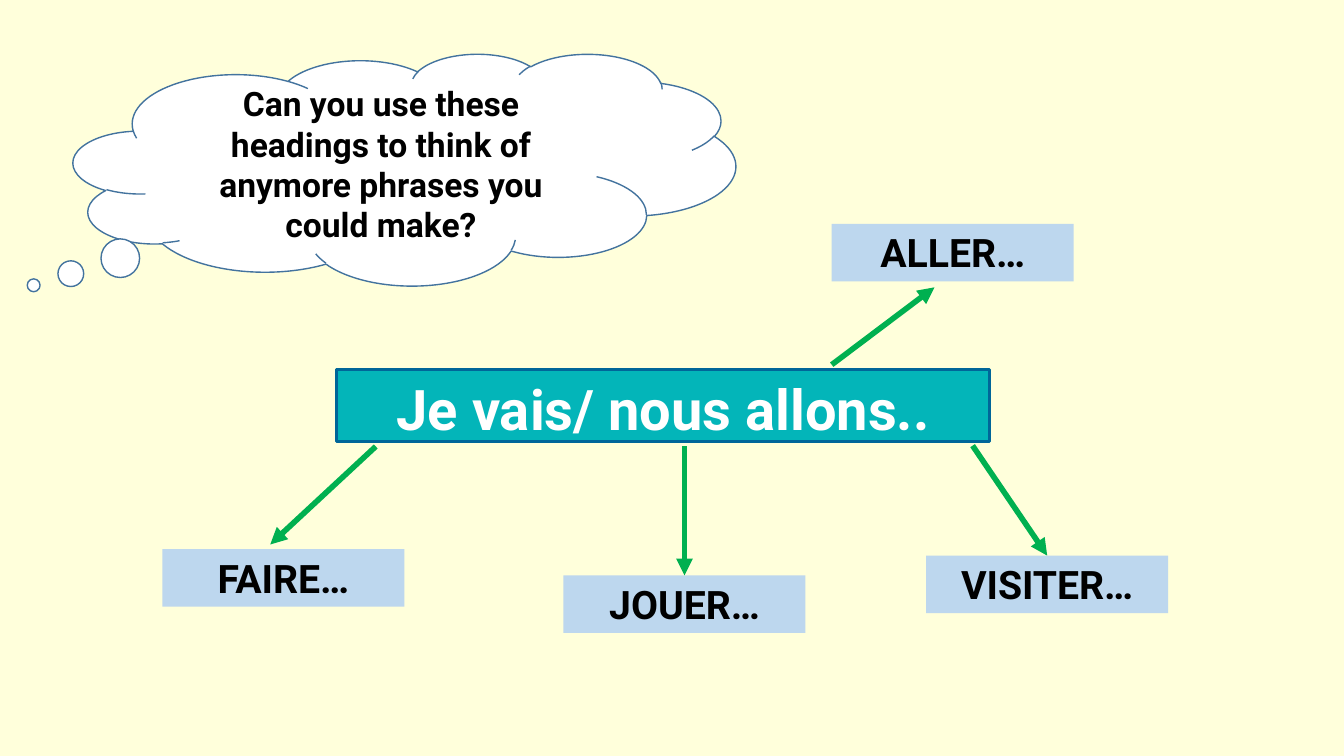
from dataclasses import dataclass

from lxml.etree import SubElement
from pptx import Presentation
from pptx.dml.color import RGBColor
from pptx.enum.shapes import MSO_CONNECTOR, MSO_SHAPE
from pptx.enum.text import MSO_ANCHOR, MSO_AUTO_SIZE, PP_ALIGN
from pptx.oxml.ns import qn
from pptx.util import Cm, Pt


@dataclass(frozen=True)
class Theme:
    font: str = "Roboto"
    background: str = "FFFFDB"
    dark: str = "000000"
    light: str = "FFFFFF"
    cloud_edge: str = "43739E"
    heading_fill: str = "03B5B9"
    heading_edge: str = "006699"
    verb_fill: str = "BDD7EE"
    arrow: str = "00B050"
    heading_size: int = 40
    verb_size: int = 28
    question_size: int = 24


def set_all(target, values):
    for name, value in values.items():
        setattr(target, name, value)


def place(shape, box):
    set_all(shape, dict(zip(("left", "top", "width", "height"), map(Cm, box))))


class MindMap:
    def __init__(self, deck, theme):
        self.theme = theme
        self.slide = deck.slides.add_slide(deck.slide_layouts[5])
        self.paint(self.slide.background, theme.background)

    def paint(self, target, fill, edge=None, edge_width=1):
        target.fill.solid()
        target.fill.fore_color.rgb = RGBColor.from_string(fill)
        if edge:
            target.line.color.rgb = RGBColor.from_string(edge)
            target.line.width = Pt(edge_width)

    def letter(self, shape, text, size, color, **frame_format):
        """Fill a shape with centred bold text."""
        frame = shape.text_frame
        frame.text = text
        set_all(frame, {"word_wrap": True, "auto_size": MSO_AUTO_SIZE.NONE,
                        "vertical_anchor": MSO_ANCHOR.TOP, **frame_format})
        paragraph = frame.paragraphs[0]
        paragraph.alignment = PP_ALIGN.CENTER
        font = paragraph.runs[0].font
        set_all(font, {"name": self.theme.font, "size": Pt(size), "bold": True})
        font.color.rgb = RGBColor.from_string(color)

    def heading(self, text, box):
        title = self.slide.shapes.title
        place(title, box)
        self.paint(title, self.theme.heading_fill, self.theme.heading_edge, 2.25)
        self.letter(title, text, self.theme.heading_size, self.theme.light)

    def thought_cloud(self, text, box, tail):
        cloud = self.slide.shapes.add_shape(MSO_SHAPE.CLOUD_CALLOUT, *map(Cm, box))
        cloud.shadow.inherit = False
        for index, offset in enumerate(tail):
            cloud.adjustments[index] = offset
        self.paint(cloud, self.theme.light, self.theme.cloud_edge)
        self.letter(cloud, text, self.theme.question_size, self.theme.dark,
                    vertical_anchor=MSO_ANCHOR.MIDDLE)

    def verb(self, text, box):
        label = self.slide.shapes.add_textbox(*map(Cm, box))
        self.paint(label, self.theme.verb_fill)
        self.letter(label, text, self.theme.verb_size, self.theme.dark,
                    auto_size=MSO_AUTO_SIZE.SHAPE_TO_FIT_TEXT)
        return label

    def arrow(self, start, tip, joined_label=None):
        """Draw an arrow; a joined label takes its tip at the top centre."""
        arrow = self.slide.shapes.add_connector(
            MSO_CONNECTOR.STRAIGHT, *map(Cm, (*start, *tip)))
        if joined_label is not None:
            arrow.end_connect(joined_label, 0)
        arrow.line.color.rgb = RGBColor.from_string(self.theme.arrow)
        arrow.line.width = Pt(4)
        properties = arrow._element.spPr
        SubElement(properties.find(qn("a:ln")), qn("a:tailEnd"), type="triangle")
        SubElement(properties, qn("a:effectLst"))


VERB_SIZE = (6.1, 1.45)
# text, label corner, arrow start, arrow tip, whether the tip joins the label
VERBS = [
    ("FAIRE…", (4.09, 13.84), (9.47, 11.25), (6.81, 13.72), False),
    ("JOUER…", (14.2, 14.5), (17.25, 11.25), (17.25, 14.5), True),
    ("VISITER…", (23.34, 14), (24.51, 11.23), (26.39, 14), True),
    ("ALLER…", (20.96, 5.64), (20.96, 9.19), (23.55, 7.24), False),
]


def main():
    deck = Presentation()
    set_all(deck, {"slide_width": Cm(33.87), "slide_height": Cm(19.05)})
    mind_map = MindMap(deck, Theme())
    mind_map.heading("Je vais/ nous allons..", (8.48, 9.32, 16.46, 1.8))
    mind_map.thought_cloud(
        "Can you use these headings to think of anymore phrases you could make?",
        (1.85, 1.35, 16.69, 5.84), tail=(-0.56, 0.5))
    for text, corner, start, tip, joined in VERBS:
        label = mind_map.verb(text, (*corner, *VERB_SIZE))
        mind_map.arrow(start, tip, label if joined else None)
    deck.save("out.pptx")


if __name__ == "__main__":
    main()
